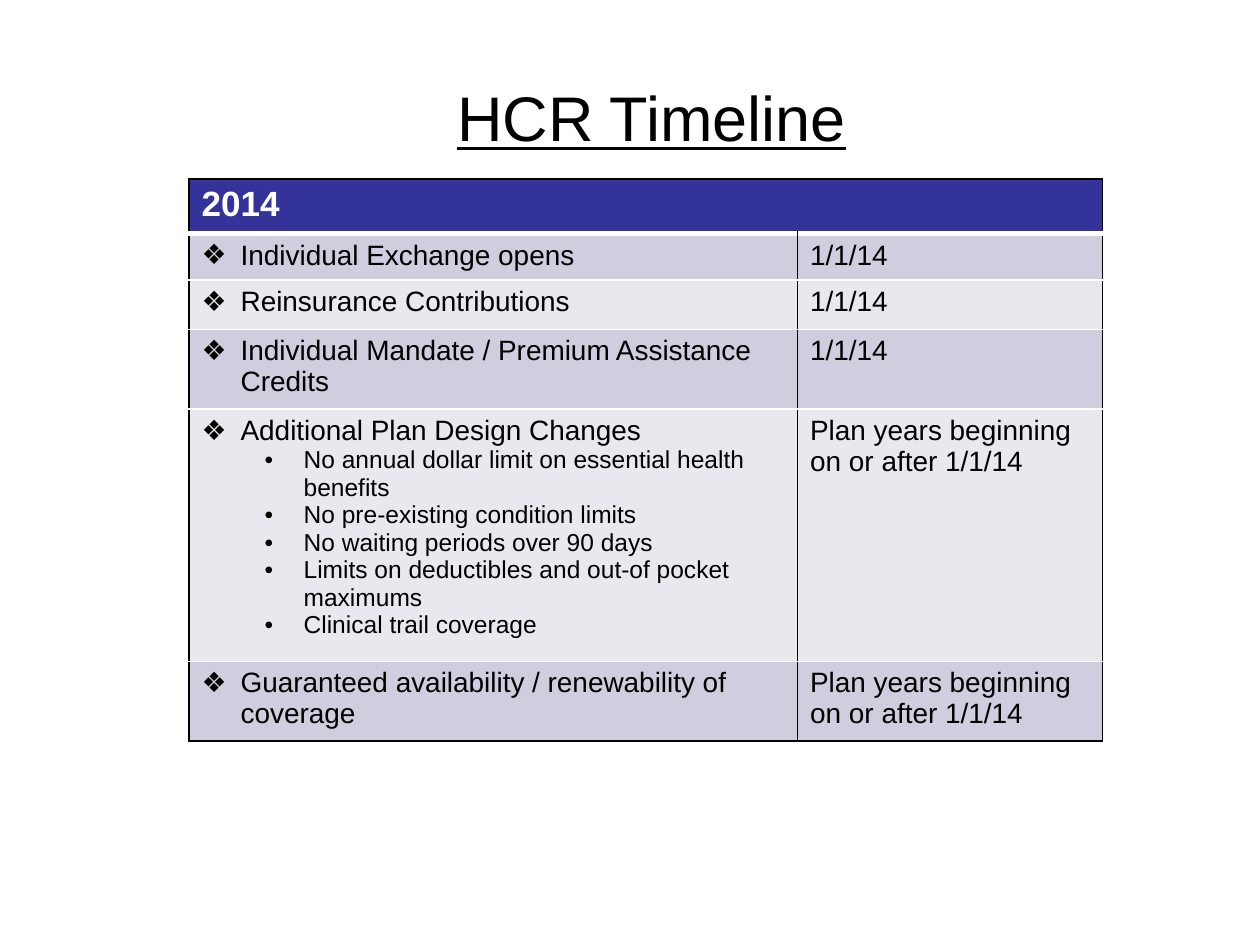
from dataclasses import dataclass

from lxml.etree import SubElement
from pptx import Presentation
from pptx.dml.color import RGBColor
from pptx.enum.text import MSO_ANCHOR, PP_ALIGN
from pptx.oxml import parse_xml
from pptx.oxml.ns import nsdecls, qn
from pptx.util import Inches, Pt

TITLE = "HCR Timeline"
YEAR = "2014"
PLAN_YEARS = "Plan years beginning on or after 1/1/14"
# Provision, its details, effective date, row height in inches
PROVISIONS = [
    ("Individual Exchange opens", [], "1/1/14", 0.37),
    ("Reinsurance Contributions", [], "1/1/14", 0.39),
    ("Individual Mandate / Premium Assistance Credits", [], "1/1/14", 0.6),
    ("Additional Plan Design Changes", [
        "No annual dollar limit on essential health benefits",
        "No pre-existing condition limits",
        "No waiting periods over 90 days",
        "Limits on deductibles and out-of pocket maximums",
        "Clinical trail coverage",
    ], PLAN_YEARS, 1.87),
    ("Guaranteed availability / renewability of coverage", [], PLAN_YEARS, 0.6),
]
HEADER_HEIGHT = 0.41
COLUMN_WIDTHS = (4.83, 2.42)


@dataclass(frozen=True)
class Theme:
    font: str = "Arial"
    black: str = "000000"
    white: str = "FFFFFF"
    header: str = "333399"
    bands: tuple = ("CECEDE", "E8E8EF")
    title_size: int = 36
    header_size: int = 20
    body_size: int = 16
    detail_size: int = 14


THEME = Theme()


def write(frame, text, *, size=THEME.body_size, color=THEME.black, bold=False,
          underline=False, align=PP_ALIGN.LEFT, bullet=None, indent=0.31, level=0):
    """Add one paragraph, using the frame's first paragraph while it is empty."""
    paragraph = frame.paragraphs[0]
    if paragraph.runs:
        paragraph = frame.add_paragraph()
    paragraph.alignment = align
    paragraph.level = level
    if bullet:
        properties = paragraph._p.get_or_add_pPr()
        properties.set("marL", str(Inches(indent)))
        properties.set("indent", str(-Inches(0.31)))
        SubElement(properties, qn("a:buFont"), typeface=THEME.font)
        SubElement(properties, qn("a:buChar"), char=bullet)
    run = paragraph.add_run()
    run.text = text
    font = run.font
    font.name, font.size = THEME.font, Pt(size)
    font.bold, font.underline = bold, underline
    font.color.rgb = RGBColor.from_string(color)


def style_cell(cell, fill, top=THEME.white, bottom=THEME.white, bottom_width=1):
    cell.fill.solid()
    cell.fill.fore_color.rgb = RGBColor.from_string(fill)
    borders = [("lnL", THEME.black, 1), ("lnR", THEME.black, 1),
               ("lnT", top, 1), ("lnB", bottom, bottom_width)]
    properties = cell._tc.get_or_add_tcPr()
    for position, (side, color, width) in enumerate(borders):
        properties.insert(position, parse_xml(
            f'<a:{side} {nsdecls("a")} w="{Pt(width)}"><a:solidFill>'
            f'<a:srgbClr val="{color}"/></a:solidFill></a:{side}>'))


def add_title(slide):
    box = slide.shapes.add_textbox(Inches(0.67), Inches(0.3), Inches(9), Inches(1.25))
    frame = box.text_frame
    frame.word_wrap = True
    frame.vertical_anchor = MSO_ANCHOR.MIDDLE
    write(frame, TITLE, size=THEME.title_size, underline=True, align=PP_ALIGN.CENTER)


def add_timeline(slide):
    heights = [HEADER_HEIGHT] + [provision[-1] for provision in PROVISIONS]
    table = slide.shapes.add_table(
        len(heights), len(COLUMN_WIDTHS), Inches(1.5), Inches(1.42),
        Inches(sum(COLUMN_WIDTHS)), Inches(sum(heights))).table
    table.first_row = table.horz_banding = False
    for column, width in zip(table.columns, COLUMN_WIDTHS):
        column.width = Inches(width)
    for row, height in zip(table.rows, heights):
        row.height = Inches(height)

    for cell in table.rows[0].cells:
        style_cell(cell, THEME.header, top=THEME.black, bottom_width=3)
    header = table.cell(0, 0)
    header.merge(table.cell(0, 1))
    write(header.text_frame, YEAR, size=THEME.header_size, color=THEME.white, bold=True)

    for index, (provision, details, date, _) in enumerate(PROVISIONS):
        is_last = index == len(PROVISIONS) - 1
        provision_cell, date_cell = table.rows[index + 1].cells
        for cell in (provision_cell, date_cell):
            style_cell(cell, THEME.bands[index % 2],
                       bottom=THEME.black if is_last else THEME.white)
        write(provision_cell.text_frame, provision, bullet="❖")
        for detail in details:
            write(provision_cell.text_frame, detail, size=THEME.detail_size,
                  bullet="•", indent=0.81, level=1)
        write(date_cell.text_frame, date)


def main():
    presentation = Presentation()
    presentation.slide_width, presentation.slide_height = Inches(10), Inches(7.5)
    slide = presentation.slides.add_slide(presentation.slide_layouts[6])
    add_title(slide)
    add_timeline(slide)
    presentation.save("out.pptx")


if __name__ == "__main__":
    main()
